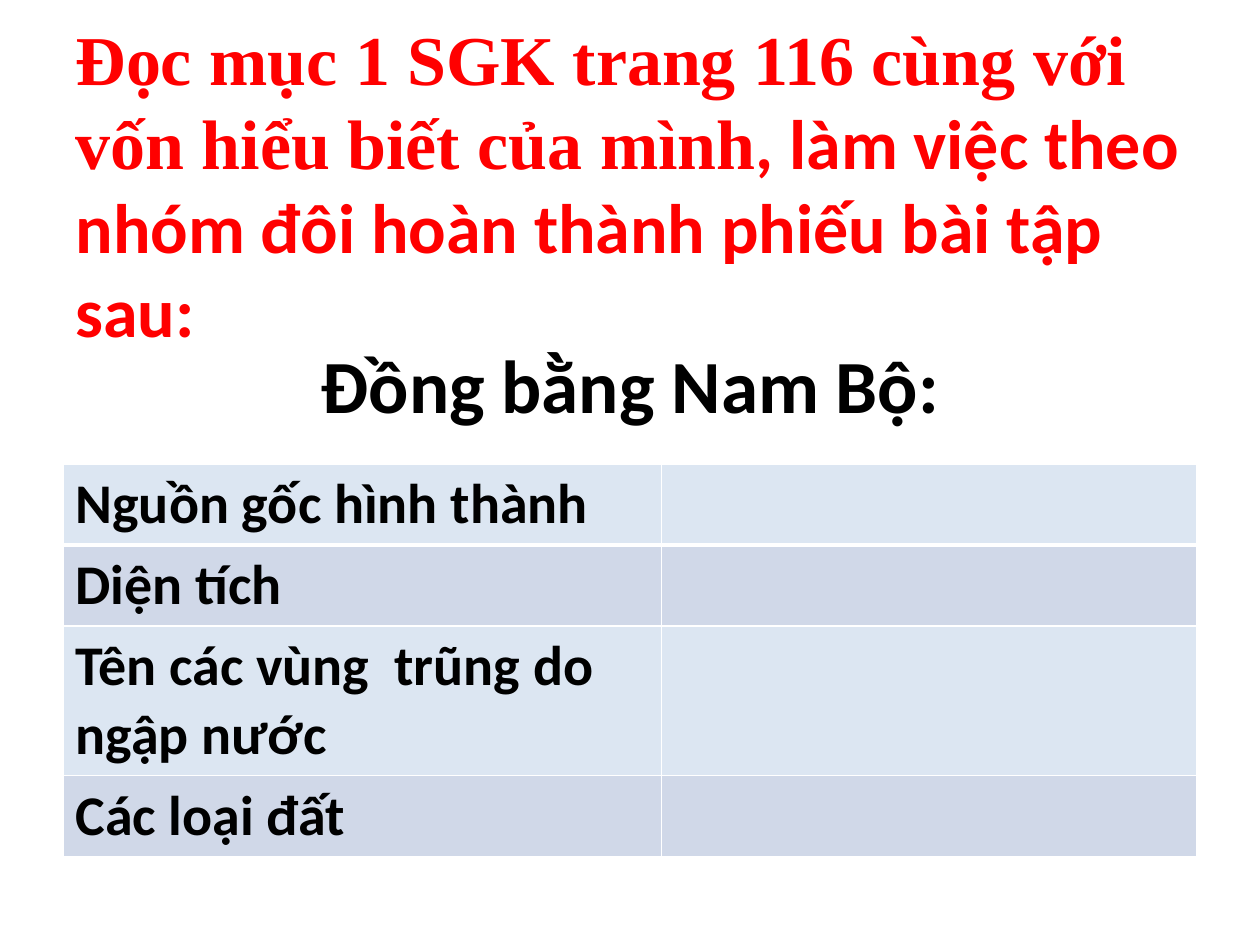
from lxml.etree import SubElement
from pptx import Presentation
from pptx.dml.color import RGBColor
from pptx.enum.text import MSO_ANCHOR, MSO_AUTO_SIZE, PP_ALIGN
from pptx.oxml.ns import qn
from pptx.util import Pt

RED = RGBColor(0xFF, 0x00, 0x00)
BLACK = RGBColor(0x00, 0x00, 0x00)
WHITE = RGBColor(0xFF, 0xFF, 0xFF)
ROW_FILLS = [RGBColor(0xDC, 0xE6, 0xF2), RGBColor(0xD0, 0xD8, 0xE8)]
LEFT, WIDTH = Pt(36), Pt(648)


def format_run(run, size, color, name="Calibri"):
    run.font.name = name
    run.font.size = Pt(size)
    run.font.bold = True
    run.font.color.rgb = color


def add_border(cell, side, width):
    """Draw a white border on one side (L, R, T or B) of a cell."""
    line = SubElement(cell._tc.get_or_add_tcPr(), qn(f"a:ln{side}"), w=str(Pt(width)))
    fill = SubElement(line, qn("a:solidFill"))
    SubElement(fill, qn("a:srgbClr"), val=str(WHITE))


presentation = Presentation()
presentation.slide_width, presentation.slide_height = Pt(720), Pt(540)
slide = presentation.slides.add_slide(presentation.slide_layouts[5])

# Task instruction
title = slide.shapes.title
title.left, title.top, title.width, title.height = LEFT, Pt(60), WIDTH, Pt(90)
title.text_frame.auto_size = MSO_AUTO_SIZE.NONE
title.text_frame.vertical_anchor = MSO_ANCHOR.MIDDLE
paragraph = title.text_frame.paragraphs[0]
paragraph.alignment = PP_ALIGN.LEFT
for text, font_name in [
    ("Đọc mục 1 SGK trang 116 cùng với vốn hiểu biết của mình", "Times New Roman"),
    (", làm việc theo nhóm đôi hoàn thành phiếu bài tập sau:", "Calibri"),
]:
    run = paragraph.add_run()
    run.text = text
    format_run(run, 40, RED, font_name)

# Worksheet table
row_labels = [
    "Nguồn gốc hình thành",
    "Diện tích",
    "Tên các vùng  trũng do ngập nước",
    "Các loại đất",
]
row_heights = [46, 46, 85, 46]
table = slide.shapes.add_table(
    len(row_labels), 2, LEFT, Pt(265), WIDTH, Pt(sum(row_heights))
).table
table.columns[0].width, table.columns[1].width = Pt(342), Pt(306)
for index, (label, height) in enumerate(zip(row_labels, row_heights)):
    row = table.rows[index]
    row.height = Pt(height)
    row.cells[0].text_frame.text = label
    format_run(row.cells[0].text_frame.paragraphs[0].runs[0], 32, BLACK)
    for cell in row.cells:
        add_border(cell, "L", 1)
        add_border(cell, "R", 1)
        add_border(cell, "T", 3 if index == 1 else 1)
        add_border(cell, "B", 3 if index == 0 else 1)
        cell.fill.solid()
        cell.fill.fore_color.rgb = ROW_FILLS[index % 2]

# Worksheet heading
heading = slide.shapes.add_textbox(LEFT, Pt(174), WIDTH, Pt(90))
heading.text_frame.word_wrap = True
heading.text_frame.vertical_anchor = MSO_ANCHOR.MIDDLE
heading.text_frame.text = "Đồng bằng Nam Bộ:"
heading_paragraph = heading.text_frame.paragraphs[0]
heading_paragraph.alignment = PP_ALIGN.CENTER
format_run(heading_paragraph.runs[0], 42.9, BLACK)

presentation.save("out.pptx")
